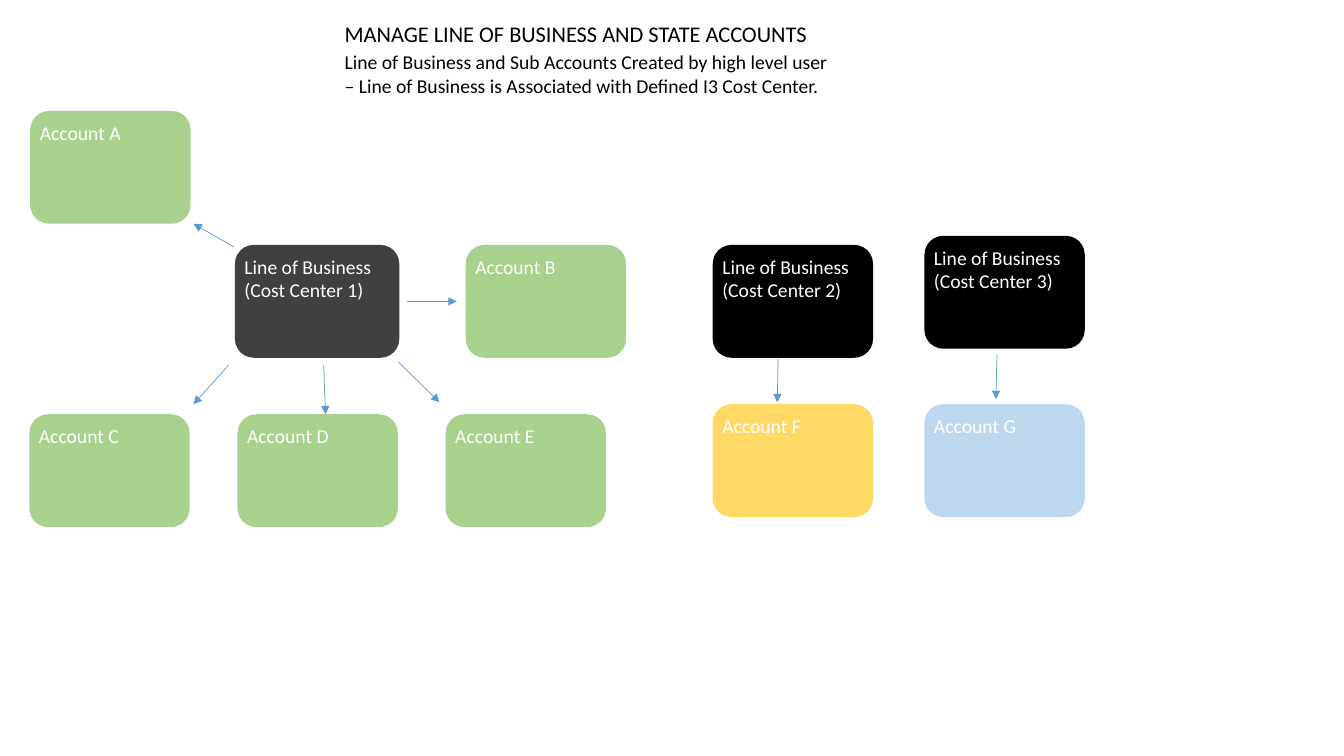
from dataclasses import dataclass
from lxml.etree import SubElement
from pptx import Presentation
from pptx.dml.color import RGBColor
from pptx.enum.shapes import MSO_CONNECTOR, MSO_SHAPE
from pptx.enum.text import MSO_ANCHOR, PP_ALIGN
from pptx.oxml.ns import qn
from pptx.util import Inches, Pt

SLIDE_W, SLIDE_H = 13.33, 7.5
BLACK, WHITE, GREY = "000000", "FFFFFF", "404040"
GREEN, YELLOW, PALE_BLUE, ARROW_BLUE = "A9D18E", "FFD966", "BDD7EE", "5B9BD5"

# Grid, in percent of the slide's width and height
BOX_W, BOX_H = 11.93, 14.93
COL_C, COL_D, COL_E = (2.18 + 15.49 * i for i in range(3))
COL_2, COL_3 = 53.03, 68.78
ROW_TOP, ROW_BUSINESS, ROW_GREEN, ROW_OTHER = 14.67, 32.4, 54.8, 53.47


@dataclass
class Heading:
    text: str
    x: float
    y: float
    w: float
    h: float
    size: int


@dataclass
class Box:
    text: str
    x: float
    y: float
    fill: str
    w: float = BOX_W


@dataclass
class Arrow:
    x1: float
    y1: float
    x2: float
    y2: float


HEADINGS = [
    Heading("MANAGE LINE OF BUSINESS AND STATE ACCOUNTS", 24.9, 2, 46.58, 4.93, 16),
    Heading("Line of Business and Sub Accounts Created by high level user "
            "– Line of Business is Associated with Defined I3 Cost Center.",
            24.9, 6, 37.88, 7.6, 14),
]
BOXES = [
    Box("Line of Business (Cost Center 1)", 17.48, ROW_BUSINESS, GREY, 12.23),
    Box("Line of Business (Cost Center 2)", COL_2, ROW_BUSINESS, BLACK),
    Box("Line of Business (Cost Center 3)", COL_3, 31.2, BLACK),
    Box("Account A", 2.25, ROW_TOP, GREEN),
    Box("Account B", 34.65, ROW_BUSINESS, GREEN),
    Box("Account C", COL_C, ROW_GREEN, GREEN),
    Box("Account D", COL_D, ROW_GREEN, GREEN),
    Box("Account E", COL_E, ROW_GREEN, GREEN),
    Box("Account F", COL_2, ROW_OTHER, YELLOW),
    Box("Account G", COL_3, ROW_OTHER, PALE_BLUE),
]
ARROWS = [
    Arrow(17.4, 32.67, 14.4, 29.6),     # to Account A
    Arrow(30.3, 39.87, 33.98, 39.87),   # to Account B
    Arrow(17.03, 48.27, 14.4, 53.47),   # to Account C
    Arrow(24.08, 48.27, 24.23, 54.8),   # to Account D
    Arrow(29.63, 47.87, 32.7, 53.2),    # to Account E
    Arrow(57.9, 47.33, 57.83, 53.2),    # to Account F
    Arrow(74.18, 46.93, 74.1, 52.8),    # to Account G
]


def rgb(colour: str) -> RGBColor:
    return RGBColor.from_string(colour)


def across(share: float) -> int:
    return Inches(SLIDE_W * share / 100)


def down(share: float) -> int:
    return Inches(SLIDE_H * share / 100)


def write(tf, text: str, size: int, colour: str, **frame_format) -> None:
    for name, value in {"word_wrap": True, **frame_format}.items():
        setattr(tf, name, value)
    p = tf.paragraphs[0]
    p.alignment = PP_ALIGN.LEFT
    r = p.add_run()
    r.text = text
    for name, value in {"name": "Calibri", "size": Pt(size)}.items():
        setattr(r.font, name, value)
    r.font.color.rgb = rgb(colour)


def draw_heading(s, heading: Heading) -> None:
    sp = s.shapes.add_textbox(across(heading.x), down(heading.y),
                              across(heading.w), down(heading.h))
    write(sp.text_frame, heading.text, heading.size, BLACK)


def draw_box(s, box: Box) -> None:
    sp = s.shapes.add_shape(MSO_SHAPE.ROUNDED_RECTANGLE, across(box.x),
                            down(box.y), across(box.w), down(BOX_H))
    sp.adjustments[0] = 0.167
    sp.shadow.inherit = False
    sp.fill.solid()
    sp.fill.fore_color.rgb = rgb(box.fill)
    sp.line.fill.background()
    margins = {f"margin_{side}": Inches(0.04)
               for side in ("left", "top", "right", "bottom")}
    write(sp.text_frame, box.text, 14, WHITE,
          vertical_anchor=MSO_ANCHOR.TOP, **margins)


def draw_arrow(s, arrow: Arrow) -> None:
    sp = s.shapes.add_connector(MSO_CONNECTOR.STRAIGHT,
                                across(arrow.x1), down(arrow.y1),
                                across(arrow.x2), down(arrow.y2))
    sp.line.width = Pt(0.5)
    sp.line.color.rgb = rgb(ARROW_BLUE)
    SubElement(sp.line._get_or_add_ln(), qn("a:tailEnd"), type="triangle")
    SubElement(sp._element.spPr, qn("a:effectLst"))


def main() -> None:
    prs = Presentation()
    prs.slide_width, prs.slide_height = Inches(SLIDE_W), Inches(SLIDE_H)
    s = prs.slides.add_slide(prs.slide_layouts[6])
    for draw, items in ((draw_heading, HEADINGS), (draw_box, BOXES),
                        (draw_arrow, ARROWS)):
        for item in items:
            draw(s, item)
    prs.save("out.pptx")


if __name__ == "__main__":
    main()
